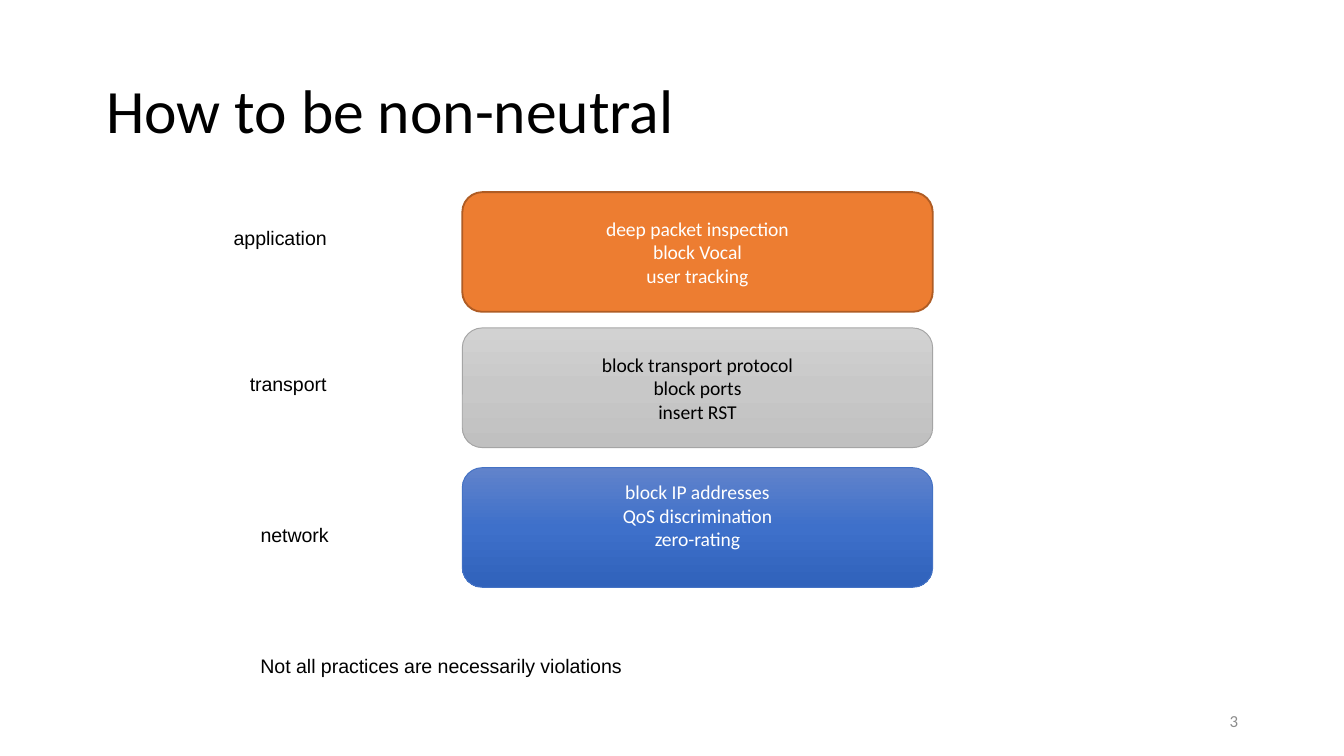
import copy
import pptx
import pptx.dml.color
import pptx.enum.shapes
import pptx.enum.text
import pptx.oxml.ns
import pptx.util

Inches = pptx.util.Inches
ALIGN = pptx.enum.text.PP_ALIGN
ANCHOR = pptx.enum.text.MSO_ANCHOR
AUTO_SIZE = pptx.enum.text.MSO_AUTO_SIZE

THEME = {
    "heading_font": "Calibri", "label_font": "Arial",
    "title_size": 33, "body_size": 10.5, "number_size": 9,
    "dark": "000000", "light": "FFFFFF", "muted": "8C8C8C",
    "orange": ["ED7D31"], "orange_line": "AF5C24",
    "gray": ["D2D2D2", "C8C8C8", "C0C0C0"], "gray_line": "A5A5A5",
    "blue": ["6183CB", "3E70CA", "3062BB"], "blue_line": "4472C4",
}

TITLE = "How to be non-neutral"
LAYERS = [
    {"top": 1.43, "color": "orange", "line_width": 1, "text": "light", "bottom_inset": 0.05,
     "practices": ["deep packet inspection", "block Vocal", "user tracking"]},
    {"top": 2.44, "color": "gray", "line_width": 0.5, "text": "dark", "bottom_inset": 0.05,
     "practices": ["block transport protocol", "block ports", "insert RST"]},
    {"top": 3.48, "color": "blue", "line_width": 0.5, "text": "light", "bottom_inset": 0.23,
     "practices": ["block IP addresses", "QoS discrimination", "zero-rating"]},
]
LABELS = [
    ("application", 1.64, 1.63, 0.91),
    ("transport", 1.76, 2.72, 0.78),
    ("network", 1.84, 3.84, 0.72),
    ("Not all practices are necessarily violations", 1.84, 4.82, 2.94),
]
SLIDE_NUMBER = "3"
SLIDE_WIDTH = 10
SLIDE_HEIGHT = SLIDE_WIDTH * 9 / 16
BOX_LEFT, BOX_WIDTH, BOX_HEIGHT = 3.44, 3.5, 0.89
LABEL_HEIGHT = 0.28


def rgb(value):
    return pptx.dml.color.RGBColor.from_string(value)


def write(frame, lines, font, size, color, align=ALIGN.LEFT):
    frame.text = "\n".join(lines)
    for paragraph in frame.paragraphs:
        paragraph.alignment = align
        paragraph.font.name = THEME[font]
        paragraph.font.size = pptx.util.Pt(THEME[size])
        paragraph.font.color.rgb = rgb(THEME[color])


def paint(shape, colors):
    if len(colors) == 1:
        shape.fill.solid()
        shape.fill.fore_color.rgb = rgb(colors[0])
        return
    shape.fill.gradient()
    shape.fill.gradient_angle = 270
    stop_list = shape.element.spPr.find(".//" + pptx.oxml.ns.qn("a:gsLst"))
    stop_list.insert(1, copy.deepcopy(stop_list[0]))
    for index, (stop, color) in enumerate(zip(shape.fill.gradient_stops, colors)):
        stop.position = index / (len(colors) - 1)
        stop.color.rgb = rgb(color)


def add_title(slide):
    title = slide.shapes.title
    title.left, title.top = Inches(0.69), Inches(0.3)
    title.width, title.height = Inches(8.62), Inches(1.09)
    frame = title.text_frame
    write(frame, [TITLE], "heading_font", "title_size", "dark")
    frame.auto_size = AUTO_SIZE.NONE
    frame.vertical_anchor = ANCHOR.MIDDLE
    frame.paragraphs[0].line_spacing = 0.9


def add_layer(slide, layer):
    box = slide.shapes.add_shape(
        pptx.enum.shapes.MSO_SHAPE.ROUNDED_RECTANGLE, Inches(BOX_LEFT),
        Inches(layer["top"]), Inches(BOX_WIDTH), Inches(BOX_HEIGHT))
    box.shadow.inherit = False
    paint(box, THEME[layer["color"]])
    box.line.color.rgb = rgb(THEME[layer["color"] + "_line"])
    box.line.width = pptx.util.Pt(layer["line_width"])
    frame = box.text_frame
    frame.vertical_anchor = ANCHOR.MIDDLE
    frame.margin_bottom = Inches(layer["bottom_inset"])
    write(frame, layer["practices"], "heading_font", "body_size", layer["text"], ALIGN.CENTER)


def add_label(slide, text, left, top, width):
    label = slide.shapes.add_textbox(
        Inches(left), Inches(top), Inches(width), Inches(LABEL_HEIGHT))
    frame = label.text_frame
    frame.word_wrap = False
    frame.auto_size = AUTO_SIZE.SHAPE_TO_FIT_TEXT
    write(frame, [text], "label_font", "body_size", "dark")


def add_slide_number(slide):
    number = slide.shapes.add_textbox(Inches(7.06), Inches(5.21), Inches(2.25), Inches(0.3))
    frame = number.text_frame
    frame.word_wrap = True
    frame.vertical_anchor = ANCHOR.MIDDLE
    write(frame, [SLIDE_NUMBER], "heading_font", "number_size", "muted", ALIGN.RIGHT)


def main():
    presentation = pptx.Presentation()
    presentation.slide_width = Inches(SLIDE_WIDTH)
    presentation.slide_height = Inches(SLIDE_HEIGHT)
    slide = presentation.slides.add_slide(presentation.slide_layouts[5])
    add_title(slide)
    add_slide_number(slide)
    for layer in LAYERS:
        add_layer(slide, layer)
    for label in LABELS:
        add_label(slide, *label)
    presentation.save("out.pptx")


if __name__ == "__main__":
    main()
